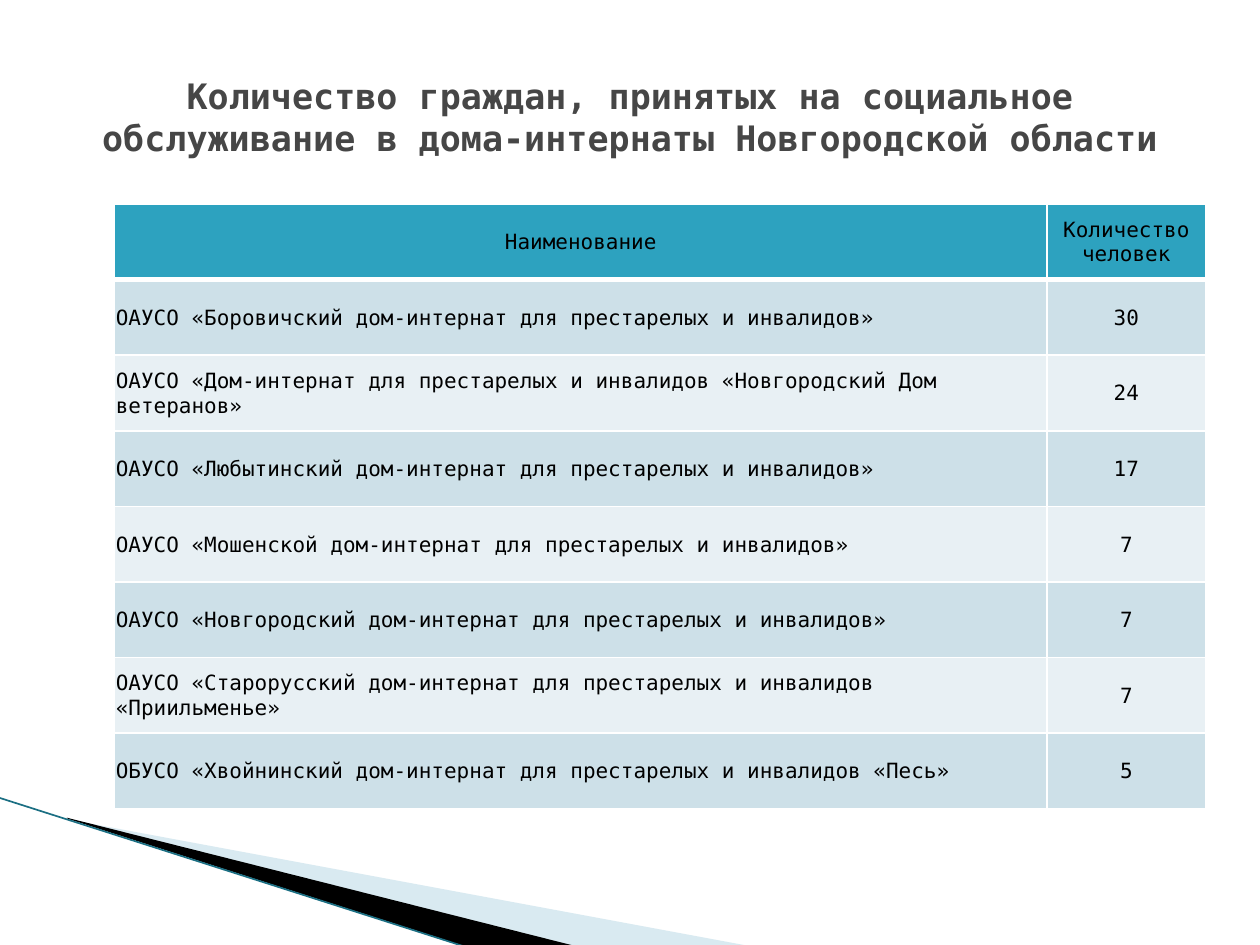
from lxml import etree
from pptx import Presentation
from pptx.dml.color import RGBColor
from pptx.enum.shapes import MSO_CONNECTOR
from pptx.enum.text import MSO_ANCHOR, PP_ALIGN
from pptx.oxml.ns import qn
from pptx.util import Pt

LEFT, CENTER = PP_ALIGN.LEFT, PP_ALIGN.CENTER
MIDDLE = MSO_ANCHOR.MIDDLE
STRAIGHT = MSO_CONNECTOR.STRAIGHT
FONT = "DejaVu Sans Mono"

# Content
TITLE = "Количество граждан, принятых на социальное обслуживание в дома-интернаты Новгородской области"
ROWS = [
    ("Наименование", "Количество человек"),
    ("ОАУСО «Боровичский дом-интернат для престарелых и инвалидов»", "30"),
    ("ОАУСО «Дом-интернат для престарелых и инвалидов «Новгородский Дом ветеранов»", "24"),
    ("ОАУСО «Любытинский дом-интернат для престарелых и инвалидов»", "17"),
    ("ОАУСО «Мошенской дом-интернат для престарелых и инвалидов»", "7"),
    ("ОАУСО «Новгородский дом-интернат для престарелых и инвалидов»", "7"),
    ("ОАУСО «Старорусский дом-интернат для престарелых и инвалидов «Приильменье»", "7"),
    ("ОБУСО «Хвойнинский дом-интернат для престарелых и инвалидов «Песь»", "5"),
]

# Layout and formats, in points
TABLE_LEFT, TABLE_TOP, ROW_HEIGHT = 65.5, 116.6, 43.2
COLUMN_WIDTHS = (532.8, 90.7)
HEADER_FILL, BAND_FILLS = "2DA2BF", ("E8F0F4", "CDE0E8")
TITLE_FORMAT = {"name": FONT, "size": Pt(20), "bold": True}
CELL_FORMAT = {"name": FONT, "size": Pt(12), "bold": False}
CELL_FRAME = {"vertical_anchor": MIDDLE, "margin_left": Pt(0.7), "margin_top": Pt(0.7),
              "margin_right": Pt(0.7), "margin_bottom": Pt(0)}
# Corner wedges: points, colour, opacity in percent
WEDGES = [
    ([(39.6, 468.4), (428.4, 540.6), (328.3, 540.6), (39.6, 468)], "A0CBDC", 40),
    ([(38.2, 467.3), (329, 540.7), (267.8, 541.4), (38.9, 468)], "000000", 100),
]
EDGE = ((-0.7, 455.8), (267.1, 541.4))
EDGE_COLOR, EDGE_WIDTH = "1B6F83", 0.95


def color(value):
    return RGBColor.from_string(value)


def apply(target, values):
    for name, value in values.items():
        setattr(target, name, value)


def write(frame, text, align, values, ink):
    para = frame.paragraphs[0]
    para.alignment = align
    span = para.add_run()
    span.text = text
    apply(span.font, values)
    span.font.color.rgb = color(ink)


def add_borders(cell, widths):
    properties = cell._tc.get_or_add_tcPr()
    for side, width in widths.items():
        line = etree.SubElement(properties, qn(f"a:ln{side}"), w=str(Pt(width)))
        fill = etree.SubElement(line, qn("a:solidFill"))
        etree.SubElement(fill, qn("a:srgbClr"), val="FFFFFF")


def add_wedge(page, points, fill, opacity):
    start, *others = [(Pt(x), Pt(y)) for x, y in points]
    builder = page.shapes.build_freeform(*start)
    builder.add_line_segments(others, close=True)
    wedge = builder.convert_to_shape()
    wedge.shadow.inherit = False
    wedge.fill.solid()
    wedge.fill.fore_color.rgb = color(fill)
    wedge.line.fill.background()
    if opacity < 100:
        tint = wedge._element.spPr.find(qn("a:solidFill"))[0]
        etree.SubElement(tint, qn("a:alpha"), val=str(opacity * 1000))


deck = Presentation()
deck.slide_width, deck.slide_height = Pt(720), Pt(540)
page = deck.slides.add_slide(deck.slide_layouts[6])

# Corner decoration
for points, fill, opacity in WEDGES:
    add_wedge(page, points, fill, opacity)
edge = page.shapes.add_connector(STRAIGHT, *[Pt(v) for point in EDGE for v in point])
edge.line.color.rgb = color(EDGE_COLOR)
edge.line.width = Pt(EDGE_WIDTH)
etree.SubElement(edge._element.spPr, qn("a:effectLst"))

# Title
box = page.shapes.add_textbox(Pt(36), Pt(21.6), Pt(648), Pt(90))
apply(box.text_frame, {"word_wrap": True, "vertical_anchor": MIDDLE})
write(box.text_frame, TITLE, CENTER, TITLE_FORMAT, "464646")

# Table
table = page.shapes.add_table(
    len(ROWS), len(COLUMN_WIDTHS), Pt(TABLE_LEFT), Pt(TABLE_TOP),
    Pt(sum(COLUMN_WIDTHS)), Pt(ROW_HEIGHT * len(ROWS))).table
for column, width in zip(table.columns, COLUMN_WIDTHS):
    column.width = Pt(width)
for r, values in enumerate(ROWS):
    table.rows[r].height = Pt(ROW_HEIGHT)
    for c, text in enumerate(values):
        cell = table.cell(r, c)
        apply(cell, CELL_FRAME)
        add_borders(cell, {"L": 1, "R": 1, "T": 3 if r == 1 else 1, "B": 3 if r == 0 else 1})
        cell.fill.solid()
        cell.fill.fore_color.rgb = color(BAND_FILLS[r % 2] if r else HEADER_FILL)
        write(cell.text_frame, text, LEFT if r and c == 0 else CENTER, CELL_FORMAT, "000000")

deck.save("out.pptx")
